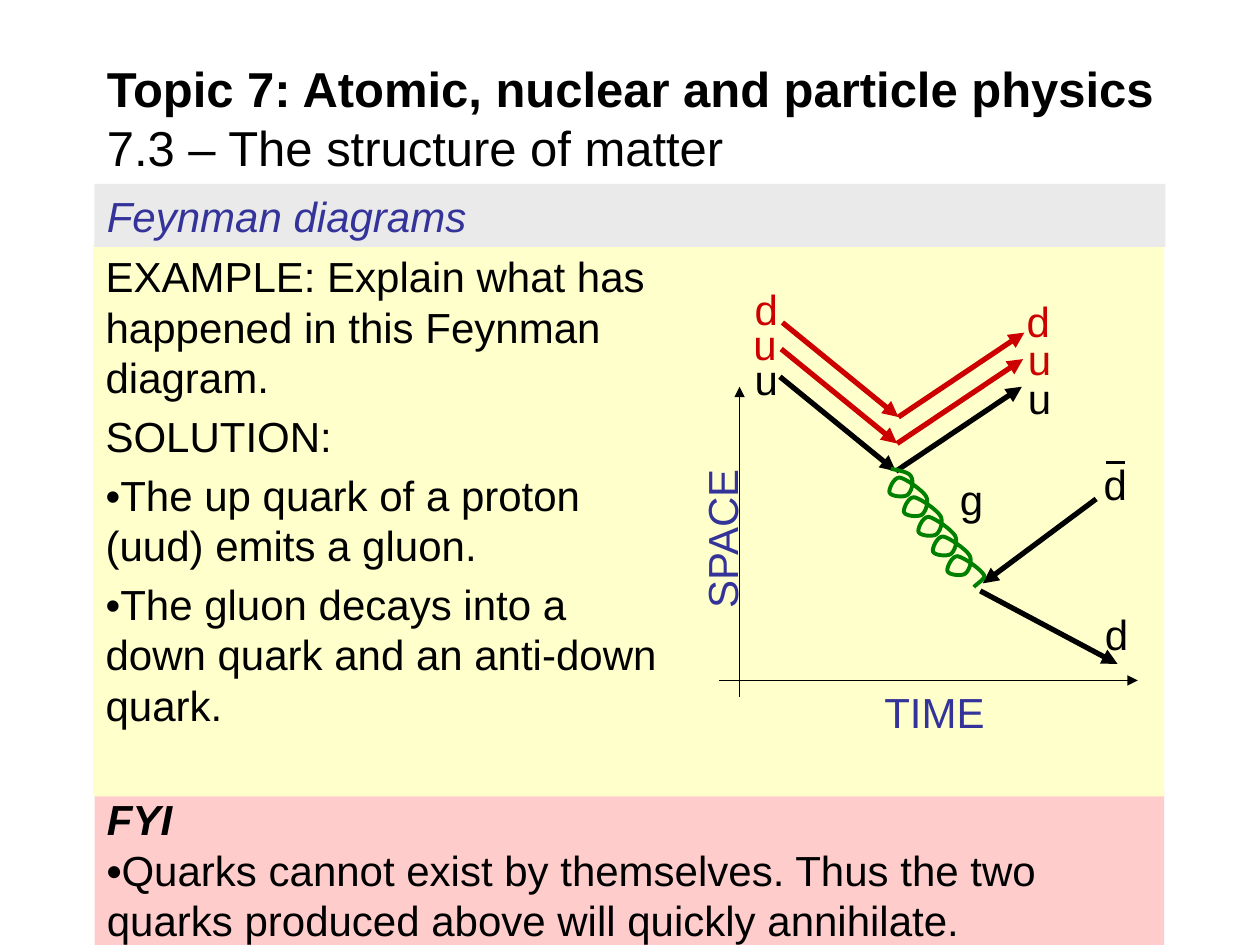
from dataclasses import dataclass
from typing import NamedTuple

from lxml import etree
from pptx import Presentation
from pptx.dml.color import RGBColor
from pptx.enum.shapes import MSO_CONNECTOR, MSO_SHAPE
from pptx.enum.text import MSO_ANCHOR, PP_ALIGN
from pptx.oxml.ns import qn
from pptx.util import Pt

STRAIGHT = MSO_CONNECTOR.STRAIGHT
RECTANGLE = MSO_SHAPE.RECTANGLE
TOP, MIDDLE = MSO_ANCHOR.TOP, MSO_ANCHOR.MIDDLE
LEFT = PP_ALIGN.LEFT

PX = 9144  # 100 px to the inch
BLACK, RED, BLUE, GREEN = "000000", "CC0000", "333399", "008000"


class Span(NamedTuple):
    text: str
    bold: bool = False
    italic: bool = False


class Para(NamedTuple):
    spans: list[Span]
    size: int = 24
    colour: str = BLACK
    space_before: float = 0


class Label(NamedTuple):
    text: str
    left: int
    top: int
    width: int = 48
    colour: str = BLACK
    rotation: int = 0


@dataclass
class Panel:
    left: int
    top: int
    width: int
    height: int
    fill: str
    paras: list[Para]
    right_inset: int = 10


@dataclass
class Line:
    start: tuple[int, int]
    end: tuple[int, int]
    width: float = 3
    colour: str = BLACK
    arrow: bool = True


PANELS = [
    Panel(75, 625, 849, 125, "FFCCCC", [
        Para([Span("FYI", bold=True, italic=True)]),
        Para([Span("•", bold=True),
              Span("Quarks cannot exist by themselves. Thus the two "
                   "quarks produced above will quickly annihilate.")]),
    ]),
    Panel(74, 194, 850, 438, "FFFFCC", [
        Para([Span("EXAMPLE: Explain what has happened in this Feynman diagram.")]),
        Para([Span("SOLUTION:")], space_before=4.8),
        Para([Span("•The up quark of a proton (uud) emits a gluon.")], space_before=4.8),
        Para([Span("•The gluon decays into a down quark and an anti-down quark.")],
             space_before=4.8),
    ], right_inset=394),
    Panel(75, 146, 850, 50, "EAEAEA",
          [Para([Span("Feynman diagrams", italic=True)], colour=BLUE)]),
]

TITLE = [
    Para([Span("Topic 7: Atomic, nuclear and particle physics", bold=True)], size=28),
    Para([Span("7.3 – The structure of matter")], size=28),
]

PROTON_QUARKS = [((711, 374), BLACK), ((712, 352), RED), ((713, 331), RED)]
OTHER_LINES = [
    Line((870, 396), (780, 463)),
    Line((778, 469), (887, 527)),
    Line((587, 553), (587, 307), 0.75),
    Line((571, 540), (903, 540), 0.75),
    Line((878, 367), (893, 367), 1.5, arrow=False),
]

LABELS = [
    Label("SPACE", 497, 392, 151, BLUE, 270),
    Label("TIME", 692, 540, 106, BLUE),
    Label("u", 589, 276),
    Label("u", 806, 291),
    Label("d", 867, 478),
    Label("d", 866, 359),
    Label("g", 752, 371, 67),
    Label("u", 588, 248, colour=RED),
    Label("u", 806, 260, colour=RED),
    Label("d", 589, 220, colour=RED),
    Label("d", 805, 230, colour=RED),
]

# Bezier points of one gluon loop, relative to where the loop starts.
GLUON_LOOP = [
    (3, 5), (0, 13), (-3, 15), (-6, 17), (-16, 16), (-17, 13),
    (-18, 11), (-14, 1), (-9, 1), (-4, 2), (9, 11), (12, 16),
]
LOOP_COUNT = 5
LOOP_STEP = (11.5, 15.6)


def rgb(colour: str) -> RGBColor:
    return RGBColor.from_string(colour)


def write_text(shape, paras: list[Para], right_inset: int = 10, anchor=TOP) -> None:
    frame = shape.text_frame
    frame.word_wrap = True
    frame.vertical_anchor = anchor
    frame.margin_left, frame.margin_right = 10 * PX, right_inset * PX
    frame.margin_top = frame.margin_bottom = 5 * PX
    for index, item in enumerate(paras):
        para = frame.add_paragraph() if index else frame.paragraphs[0]
        para.alignment = LEFT
        para.space_before = Pt(item.space_before)
        para.font.name = "Arial"
        para.font.size = Pt(item.size)
        para.font.color.rgb = rgb(item.colour)
        for span in item.spans:
            run = para.add_run()
            run.text = span.text
            run.font.bold, run.font.italic = span.bold, span.italic


def add_text_box(page, left: int, top: int, width: int, height: int):
    return page.shapes.add_textbox(left * PX, top * PX, width * PX, height * PX)


def draw_panel(page, panel: Panel) -> None:
    box = page.shapes.add_shape(RECTANGLE, panel.left * PX, panel.top * PX,
                                panel.width * PX, panel.height * PX)
    box.shadow.inherit = False
    box.fill.solid()
    box.fill.fore_color.rgb = rgb(panel.fill)
    box.line.fill.background()
    write_text(box, panel.paras, panel.right_inset)


def draw_label(page, label: Label) -> None:
    box = add_text_box(page, label.left, label.top, label.width, 50)
    box.rotation = label.rotation
    write_text(box, [Para([Span(label.text)], colour=label.colour)])


def draw_line(page, line: Line) -> None:
    connector = page.shapes.add_connector(
        STRAIGHT, *(value * PX for value in line.start + line.end))
    connector.line.width = Pt(line.width)
    connector.line.color.rgb = rgb(line.colour)
    if line.arrow:
        etree.SubElement(connector.line._get_or_add_ln(), qn("a:tailEnd"), type="triangle")
    etree.SubElement(connector._element.spPr, qn("a:effectLst"))


def draw_gluon(page) -> None:
    """Draw the coil as cubic curves, three points to a curve."""
    points = [(710, 373), (721, 374), (723, 378)]
    for loop in range(LOOP_COUNT):
        left, top = 723 + loop * LOOP_STEP[0], 378 + loop * LOOP_STEP[1]
        points += [(left + x, top + y) for x, y in GLUON_LOOP]
    points += [(783, 459), (774, 464), (773, 466)]
    builder = page.shapes.build_freeform(707 * PX, 372 * PX)
    builder.add_line_segments([(round(x * PX), round(y * PX)) for x, y in points],
                              close=False)
    coil = builder.convert_to_shape()
    segments = coil._element.xpath(".//a:lnTo")
    for first in range(0, len(segments), 3):
        curve = etree.Element(qn("a:cubicBezTo"))
        segments[first].addprevious(curve)
        for segment in segments[first:first + 3]:
            curve.append(segment[0])
            segment.getparent().remove(segment)
    coil.shadow.inherit = False
    coil.fill.background()
    coil.line.width = Pt(2.25)
    coil.line.color.rgb = rgb(GREEN)


def main() -> None:
    deck = Presentation()
    deck.slide_width, deck.slide_height = 1000 * PX, 750 * PX
    page = deck.slides.add_slide(deck.slide_layouts[6])
    for panel in PANELS:
        draw_panel(page, panel)
    write_text(add_text_box(page, 75, 48, 900, 91), TITLE, anchor=MIDDLE)
    for (x, y), colour in PROTON_QUARKS:
        draw_line(page, Line((x - 92, y - 75), (x, y), colour=colour))
        draw_line(page, Line((x, y), (x + 100, y - 67), colour=colour))
    for line in OTHER_LINES:
        draw_line(page, line)
    draw_gluon(page)
    for label in LABELS:
        draw_label(page, label)
    deck.save("out.pptx")


if __name__ == "__main__":
    main()
